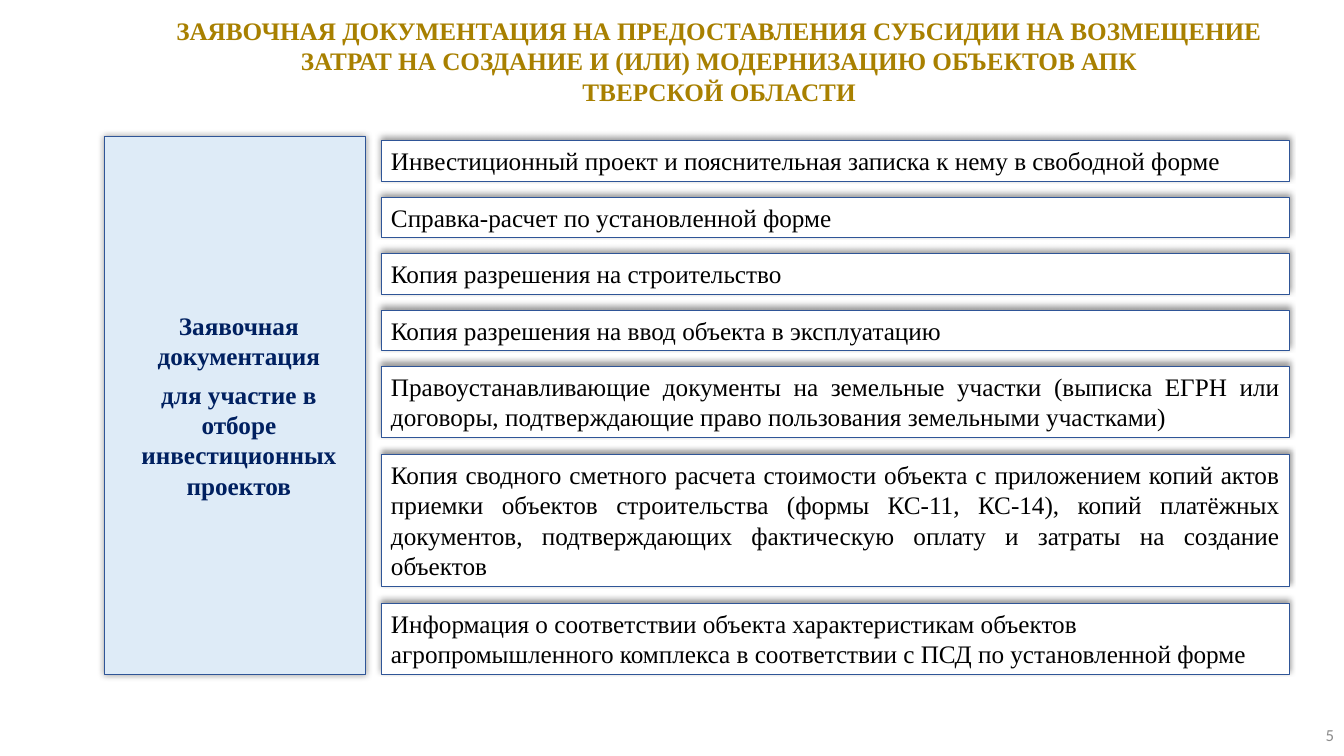
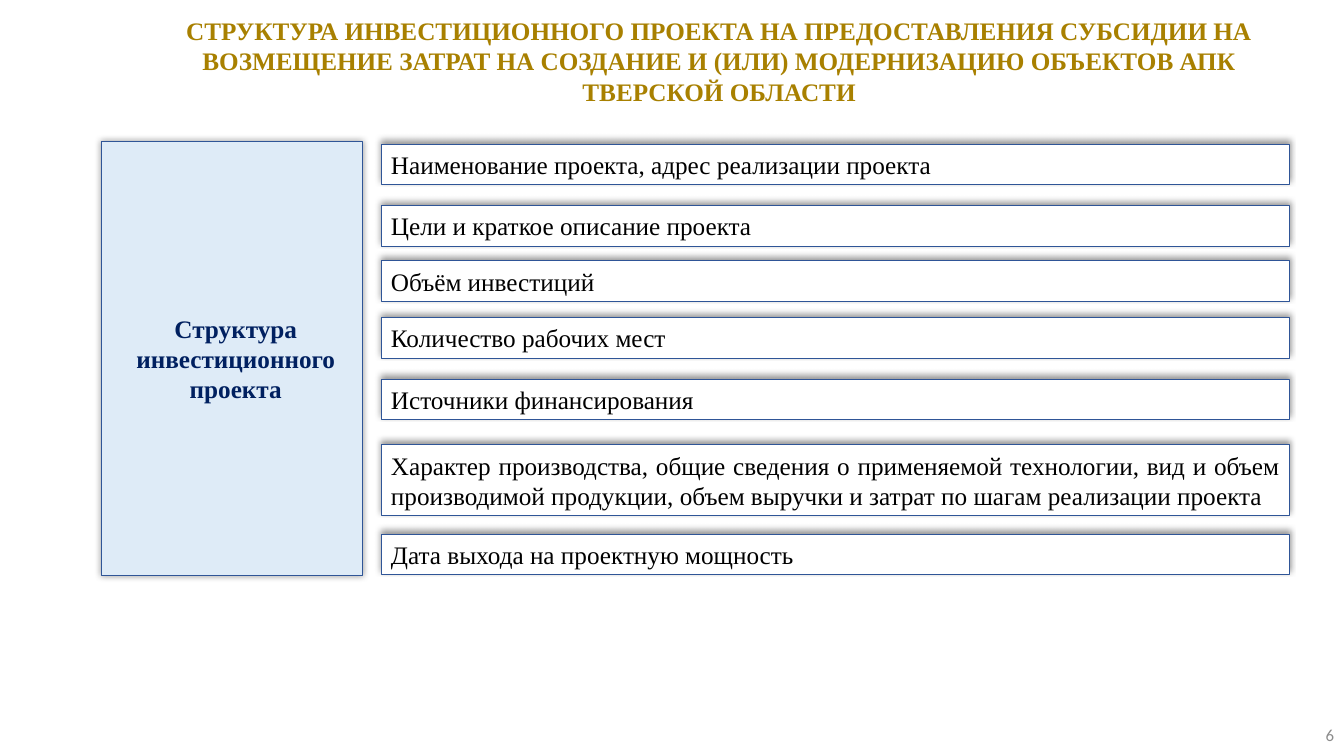
from typing import NamedTuple

from lxml import etree
from pptx import Presentation
from pptx.dml.color import RGBColor
from pptx.enum import shapes, text
from pptx.oxml import ns
from pptx.util import Pt

COLORS = {
    "title": "A88000",
    "panel": "DEEBF7",
    "panel_text": "002060",
    "row": "FFFFFF",
    "row_text": "000000",
    "border": "2F5597",
    "shadow": "000000",
    "number": "8C8C8C",
}
FONT = "Times New Roman"
NUMBER_FONT = "Calibri"
LINE_HEIGHT = 21.8
INSET_X, INSET_Y = 7.2, 3.6
ROW_LEFT, ROW_WIDTH = 272.2, 649.2
PANEL_WIDTH = 186.5
ALIGN = text.PP_ALIGN


class Row(NamedTuple):
    top: float
    text: str
    lines: int = 1
    align: ALIGN = ALIGN.JUSTIFY


class Panel(NamedTuple):
    left: float
    top: float
    height: float
    paragraphs: tuple


SLIDES = [
    {
        "number": 5,
        "title": (
            "ЗАЯВОЧНАЯ ДОКУМЕНТАЦИЯ НА ПРЕДОСТАВЛЕНИЯ СУБСИДИИ НА ВОЗМЕЩЕНИЕ "
            "ЗАТРАТ НА СОЗДАНИЕ И (ИЛИ) МОДЕРНИЗАЦИЮ ОБЪЕКТОВ АПК",
            "ТВЕРСКОЙ ОБЛАСТИ",
        ),
        "panel": Panel(74.4, 97.2, 384.5, (
            "Заявочная документация",
            "для участие в отборе инвестиционных проектов",
        )),
        "rows": [
            Row(100.5, "Инвестиционный проект и пояснительная записка к нему в свободной форме"),
            Row(141, "Справка-расчет по установленной форме"),
            Row(181.2, "Копия разрешения на строительство"),
            Row(221.6, "Копия разрешения на ввод объекта в эксплуатацию"),
            Row(261.6, "Правоустанавливающие документы на земельные участки (выписка ЕГРН "
                "или договоры, подтверждающие право пользования земельными участками)", 2),
            Row(324.6, "Копия сводного сметного расчета стоимости объекта с приложением "
                "копий актов приемки объектов строительства (формы КС-11, КС-14), копий "
                "платёжных документов, подтверждающих фактическую оплату и затраты на "
                "создание объектов", 4),
            Row(431, "Информация о соответствии объекта характеристикам объектов "
                "агропромышленного комплекса в соответствии с ПСД по установленной форме",
                2, ALIGN.LEFT),
        ],
    },
    {
        "number": 6,
        "title": (
            "СТРУКТУРА ИНВЕСТИЦИОННОГО ПРОЕКТА НА ПРЕДОСТАВЛЕНИЯ СУБСИДИИ НА "
            "ВОЗМЕЩЕНИЕ ЗАТРАТ НА СОЗДАНИЕ И (ИЛИ) МОДЕРНИЗАЦИЮ ОБЪЕКТОВ АПК",
            "ТВЕРСКОЙ ОБЛАСТИ",
        ),
        "panel": Panel(72.2, 101, 310, ("Структура инвестиционного проекта",)),
        "rows": [
            Row(103, "Наименование проекта, адрес реализации проекта"),
            Row(146.9, "Цели и краткое описание проекта"),
            Row(186.4, "Объём инвестиций"),
            Row(227, "Количество рабочих мест", 1, ALIGN.LEFT),
            Row(270.8, "Источники финансирования", 1, ALIGN.LEFT),
            Row(317.8, "Характер производства, общие сведения о применяемой технологии, "
                "вид и объем производимой продукции, объем выручки и затрат по шагам "
                "реализации проекта", 2),
            Row(381.6, "Дата выхода на проектную мощность", 1, ALIGN.LEFT),
        ],
    },
]


def rgb(name):
    return RGBColor.from_string(COLORS[name])


def write(shape, paragraphs, color, align, size=18, bold=False, font=FONT,
          anchor=text.MSO_ANCHOR.MIDDLE, space_after=0):
    frame = shape.text_frame
    frame.word_wrap = True
    frame.vertical_anchor = anchor
    frame.margin_left = frame.margin_right = Pt(INSET_X)
    frame.margin_top = frame.margin_bottom = Pt(INSET_Y)
    frame.text = "\n".join(paragraphs)
    for paragraph in frame.paragraphs:
        paragraph.alignment = align
        paragraph.space_after = Pt(space_after)
        paragraph.font.name = font
        paragraph.font.size = Pt(size)
        paragraph.font.bold = bold
        paragraph.font.color.rgb = rgb(color)
    return frame


def add_text(slide, left, top, width, height, paragraphs, color, align, **style):
    box = slide.shapes.add_textbox(Pt(left), Pt(top), Pt(width), Pt(height))
    write(box, paragraphs, color, align, **style)


def set_shadow(shape, blur, distance, angle):
    shape.shadow.inherit = False
    effects = shape._element.spPr.find(ns.qn("a:effectLst"))
    shadow = etree.SubElement(
        effects, ns.qn("a:outerShdw"), blurRad=str(Pt(blur)),
        dist=str(Pt(distance)), dir=str(angle * 60000), algn="ctr", rotWithShape="0")
    color = etree.SubElement(shadow, ns.qn("a:srgbClr"), val=COLORS["shadow"])
    etree.SubElement(color, ns.qn("a:alpha"), val="40000")


def add_card(slide, left, top, width, height, fill, line_width):
    card = slide.shapes.add_shape(
        shapes.MSO_SHAPE.RECTANGLE, Pt(left), Pt(top), Pt(width), Pt(height))
    card.fill.solid()
    card.fill.fore_color.rgb = rgb(fill)
    card.line.color.rgb = rgb("border")
    card.line.width = Pt(line_width)
    return card


def add_panel(slide, panel):
    card = add_card(slide, panel.left, panel.top, PANEL_WIDTH, panel.height, "panel", 0.5)
    set_shadow(card, blur=5, distance=0, angle=0)
    frame = write(card, panel.paragraphs, "panel_text", ALIGN.CENTER, bold=True, space_after=6)
    frame.margin_left = Pt(13)


def add_row(slide, row):
    height = 2 * INSET_Y + row.lines * LINE_HEIGHT
    card = add_card(slide, ROW_LEFT, row.top, ROW_WIDTH, height, "row", 0)
    set_shadow(card, blur=4, distance=3, angle=270)
    frame = write(card, [row.text], "row_text", row.align, anchor=text.MSO_ANCHOR.TOP)
    frame.auto_size = text.MSO_AUTO_SIZE.SHAPE_TO_FIT_TEXT


def add_slide(presentation, content):
    slide = presentation.slides.add_slide(presentation.slide_layouts[6])
    add_text(slide, 93.6, 8.6, 840.2, 69.8, content["title"], "title", ALIGN.CENTER, bold=True)
    add_panel(slide, content["panel"])
    for row in content["rows"]:
        add_row(slide, row)
    add_text(slide, 744, 510.5, 216, 28.8, [str(content["number"])], "number",
             ALIGN.RIGHT, size=12, font=NUMBER_FONT)


def main():
    presentation = Presentation()
    presentation.slide_width, presentation.slide_height = Pt(960), Pt(540)
    for content in SLIDES:
        add_slide(presentation, content)
    presentation.save("out.pptx")


if __name__ == "__main__":
    main()
